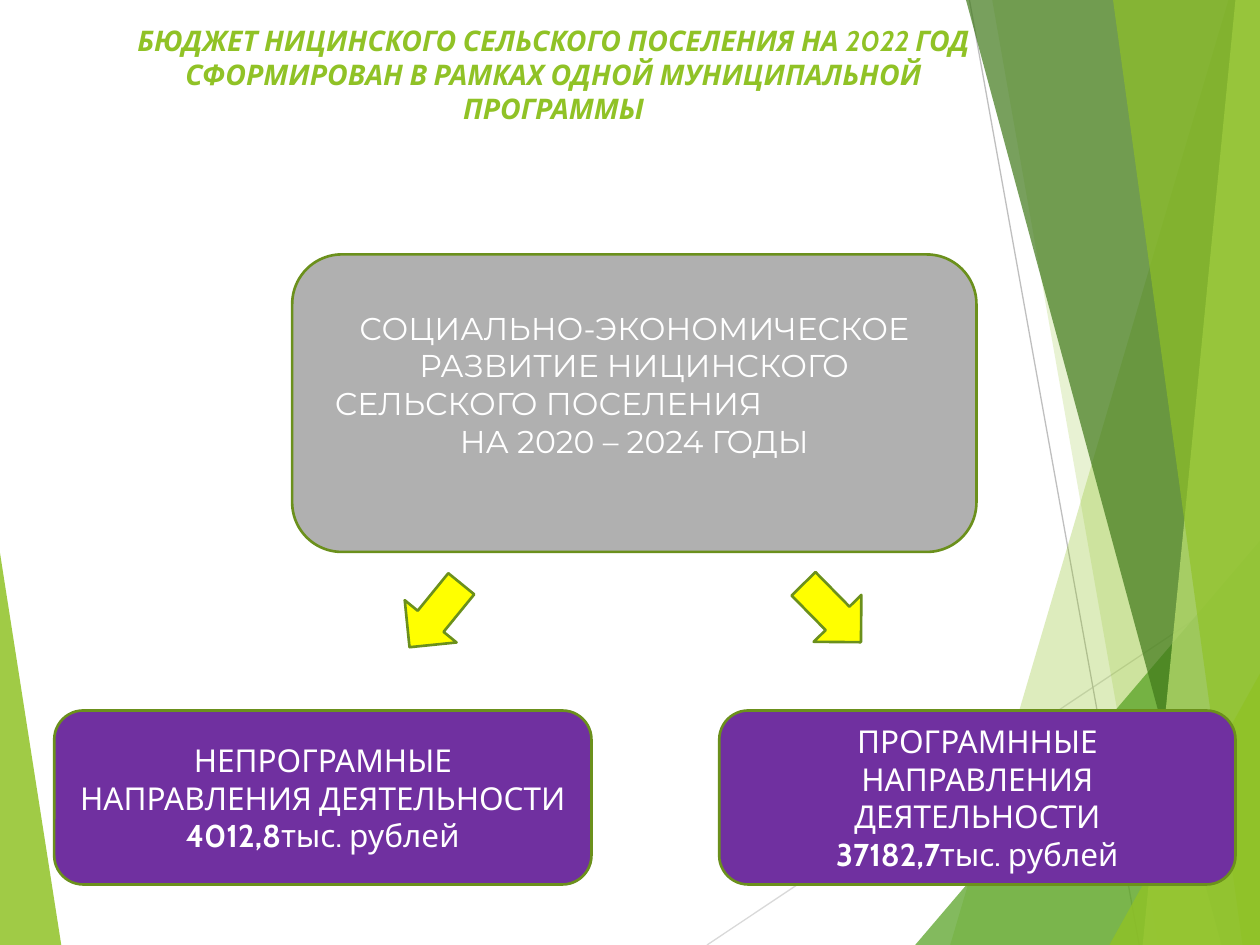
from lxml import etree
from pptx import Presentation
from pptx.dml.color import RGBColor
from pptx.enum.shapes import MSO_CONNECTOR, MSO_SHAPE
from pptx.enum.text import MSO_ANCHOR, PP_ALIGN
from pptx.oxml.ns import qn
from pptx.util import Pt

ROUNDED = MSO_SHAPE.ROUNDED_RECTANGLE
DOWN_ARROW = MSO_SHAPE.DOWN_ARROW
STRAIGHT = MSO_CONNECTOR.STRAIGHT
CENTER, LEFT = PP_ALIGN.CENTER, PP_ALIGN.LEFT
TOP, MIDDLE = MSO_ANCHOR.TOP, MSO_ANCHOR.MIDDLE
WIDTH, HEIGHT = 720, 540

COLORS = {
    "lime": "90C226", "green": "54A021", "forest": "3F7819", "pale": "C0E474",
    "outline": "6B901C", "gray": "B0B0B0", "purple": "7030A0",
    "yellow": "FFFF00", "white": "FFFFFF",
    "silver": "D9D9D9", "ash": "BFBFBF",
}


def color(name):
    """Return the named palette colour."""
    return RGBColor.from_string(COLORS[name])


def add_panel(page, edge, top_x, top_y, bottom_x, fill, opacity):
    """Draw a translucent panel between a slide edge and a slanted side."""
    builder = page.shapes.build_freeform(top_x, top_y, scale=Pt(1))
    builder.add_line_segments([(bottom_x, HEIGHT), (edge, HEIGHT), (edge, top_y)])
    panel = builder.convert_to_shape()
    panel.shadow.inherit = False
    panel.line.fill.background()
    panel.fill.solid()
    panel.fill.fore_color.rgb = color(fill)
    tint = panel.fill._xPr.find(qn("a:solidFill"))[0]
    etree.SubElement(tint, qn("a:alpha"), val=str(opacity * 1000))


def add_rule(page, start, end, tone):
    """Draw a thin straight line without a shadow."""
    rule = page.shapes.add_connector(STRAIGHT, *map(Pt, start + end))
    rule.line.color.rgb = color(tone)
    rule.line.width = Pt(0.75)
    etree.SubElement(rule._element.spPr, qn("a:effectLst"))


def add_block(page, kind, place, fill, rotation=0):
    """Draw an outlined preset shape."""
    block = page.shapes.add_shape(kind, *map(Pt, place))
    block.shadow.inherit = False
    block.fill.solid()
    block.fill.fore_color.rgb = color(fill)
    block.line.color.rgb = color("outline")
    block.line.width = Pt(1.5)
    block.rotation = rotation
    return block


def set_frame(box, anchor=MIDDLE, bottom=3.6):
    """Prepare a shape's text frame and return it."""
    frame = box.text_frame
    frame.word_wrap = True
    frame.vertical_anchor = anchor
    frame.margin_bottom = Pt(bottom)
    return frame


def add_paragraph(frame, align=CENTER, indent=0):
    """Return the empty first paragraph or a new one, aligned and indented."""
    first = frame.paragraphs[0]
    para = frame.add_paragraph() if first.runs else first
    para.alignment = align
    if indent:
        para._p.get_or_add_pPr().set("marL", str(Pt(indent)))
    return para


def write(para, text, size=18, font="Cabin", tone="white", bold=False, italic=False):
    """Append formatted text to a paragraph."""
    span = para.add_run()
    span.text = text
    span.font.size = Pt(size)
    span.font.name = font
    span.font.color.rgb = color(tone)
    span.font.bold = bold
    span.font.italic = italic


def add_backdrop(page):
    """Draw the slanted panels and thin lines behind the content."""
    add_panel(page, 0, 0, 316, 35, "lime", 85)
    add_rule(page, (404, HEIGHT), (WIDTH, 329), "silver")
    add_rule(page, (554, 0), (651, HEIGHT), "ash")
    for panel in (
        (702, 0, 543, "lime", 30),
        (567, 0, 662, "lime", 20),
        (WIDTH, 309, 523, "green", 72),
        (552, 0, 698, "forest", 70),
        (706, 0, 653, "pale", 70),
        (636, 0, 710, "lime", 65),
        (WIDTH, 385, 634, "lime", 80),
    ):
        add_panel(page, WIDTH, *panel)


def add_title(page, text):
    """Write the slide heading."""
    box = page.shapes.add_textbox(Pt(60), Pt(9.4), Pt(512.6), Pt(104.4))
    para = add_paragraph(set_frame(box, TOP))
    write(para, text, size=16.2, tone="lime", bold=True, italic=True)


def add_program(page):
    """Draw the main programme box."""
    box = add_block(page, ROUNDED, (167, 145.4, 391, 170), "gray")
    frame = set_frame(box, bottom=25.2)
    for text, align, indent in (
        ("СОЦИАЛЬНО-ЭКОНОМИЧЕСКОЕ РАЗВИТИЕ НИЦИНСКОГО", CENTER, 0),
        ("СЕЛЬСКОГО ПОСЕЛЕНИЯ", LEFT, 9),
        ("НА 2020 – 2024 ГОДЫ", CENTER, 0),
    ):
        write(add_paragraph(frame, align, indent), text, font="Montserrat")


def add_direction(page, left, width, name, amount):
    """Draw a spending direction with its amount."""
    box = add_block(page, ROUNDED, (left, 406, width, 99.4), "purple")
    frame = set_frame(box)
    write(add_paragraph(frame), name)
    total = add_paragraph(frame)
    write(total, amount, bold=True)
    write(total, "тыс. рублей")


def main():
    """Build and save the deck."""
    deck = Presentation()
    deck.slide_width, deck.slide_height = Pt(WIDTH), Pt(HEIGHT)
    page = deck.slides.add_slide(deck.slide_layouts[6])
    add_backdrop(page)
    add_title(page, "БЮДЖЕТ НИЦИНСКОГО СЕЛЬСКОГО ПОСЕЛЕНИЯ НА 2022 ГОД "
                    "СФОРМИРОВАН В РАМКАХ ОДНОЙ МУНИЦИПАЛЬНОЙ ПРОГРАММЫ")
    add_program(page)
    add_direction(page, 31, 307, "НЕПРОГРАМНЫЕ НАПРАВЛЕНИЯ ДЕЯТЕЛЬНОСТИ", "4012,8")
    add_direction(page, 411, 295, "ПРОГРАМННЫЕ НАПРАВЛЕНИЯ ДЕЯТЕЛЬНОСТИ", "37182,7")
    for left, top, rotation in ((229.7, 328.3, 39.2), (456.5, 326.9, 315.5)):
        add_block(page, DOWN_ARROW, (left, top, 38.2, 46.8), "yellow", rotation)
    deck.save("out.pptx")


if __name__ == "__main__":
    main()
